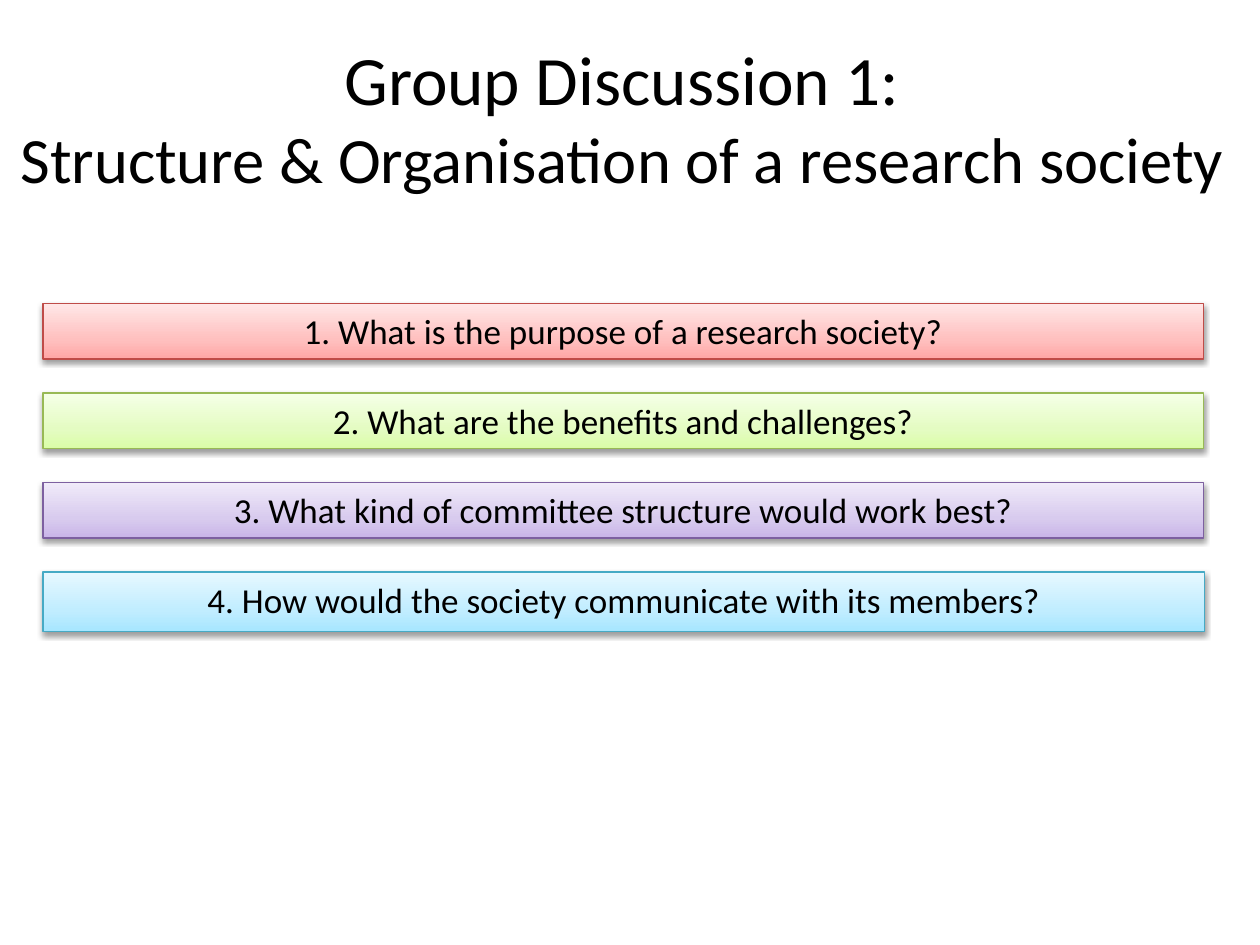
from copy import deepcopy

from lxml.etree import SubElement
from pptx import Presentation
from pptx.dml.color import RGBColor
from pptx.enum.shapes import MSO_SHAPE as Shape
from pptx.enum.text import MSO_ANCHOR as Anchor, PP_ALIGN as Align
from pptx.oxml.ns import qn
from pptx.util import Inches, Pt

COLORS = {
    "text": "000000",
    "red": ("BF4C48", "FFA6A5", "FFC0BF", "FFE7E7"),
    "green": ("98B955", "DAFDA7", "E4FCC2", "F5FFE7"),
    "purple": ("7D60A0", "C9B5E8", "D8CBEE", "F0EAF9"),
    "blue": ("46AAC5", "A7E6FF", "C1EDFF", "E7F8FF"),
}
TITLE = (("Group Discussion 1: ", 39.6),
         ("Structure & Organisation of a research society ", 36.9))
QUESTIONS = (
    ("1. What is the purpose of a research society?", "red", 9.21, 0.44),
    ("2. What are the benefits and challenges?", "green", 9.21, 0.44),
    ("3. What kind of committee structure would work best?", "purple", 9.21, 0.44),
    ("4. How would the society communicate with its members?", "blue", 9.22, 0.47),
)
LEFT, TOP, STEP = 0.34, 2.41, 0.71


class DiscussionPage:
    """Holds the text style and the slide, and draws each kind of element."""

    def __init__(self, page, font="Calibri"):
        self.page = page
        self.font = font

    def add_span(self, para, text, size):
        span = para.add_run()
        span.text = text
        for name, value in {"name": self.font, "size": Pt(size)}.items():
            setattr(span.font, name, value)
        span.font.color.rgb = RGBColor.from_string(COLORS["text"])

    def frame(self, box, anchor):
        for name, value in {"word_wrap": True, "vertical_anchor": anchor}.items():
            setattr(box.text_frame, name, value)
        para = box.text_frame.paragraphs[0]
        para.alignment = Align.CENTER
        return para

    def title(self, lines, *place):
        box = self.page.shapes.add_textbox(*map(Inches, place))
        para = self.frame(box, Anchor.MIDDLE)
        for index, (text, size) in enumerate(lines):
            if index:
                para.add_line_break()
            self.add_span(para, text, size)

    def shade(self, bar, shades):
        bar.fill.gradient()
        bar.fill.gradient_angle = 90
        stops = bar._element.spPr.find(".//" + qn("a:gsLst"))
        stops.insert(1, deepcopy(stops[0]))
        for stop, position, shade in zip(bar.fill.gradient_stops, (0, 0.35, 1), shades):
            stop.position = position
            stop.color.rgb = RGBColor.from_string(shade)

    def cast_shadow(self, bar):
        bar.shadow.inherit = False
        effects = bar._element.spPr.find(qn("a:effectLst"))
        shadow = SubElement(effects, qn("a:outerShdw"), blurRad="40000",
                            dist="20000", dir="5400000", rotWithShape="0")
        color = SubElement(shadow, qn("a:srgbClr"), val=COLORS["text"])
        SubElement(color, qn("a:alpha"), val="38000")

    def question(self, text, color, *place):
        bar = self.page.shapes.add_shape(Shape.RECTANGLE, *map(Inches, place))
        edge, *shades = COLORS[color]
        self.shade(bar, shades)
        bar.line.color.rgb = RGBColor.from_string(edge)
        bar.line.width = Pt(0.75)
        self.cast_shadow(bar)
        self.add_span(self.frame(bar, Anchor.TOP), text, 20)


def main():
    deck = Presentation()
    deck.slide_width, deck.slide_height = Inches(10), Inches(7.5)
    page = DiscussionPage(deck.slides.add_slide(deck.slide_layouts[6]))
    page.title(TITLE, 0, 0.3, 10, 1.25)
    for row, (text, color, width, height) in enumerate(QUESTIONS):
        page.question(text, color, LEFT, TOP + row * STEP, width, height)
    deck.save("out.pptx")


if __name__ == "__main__":
    main()
